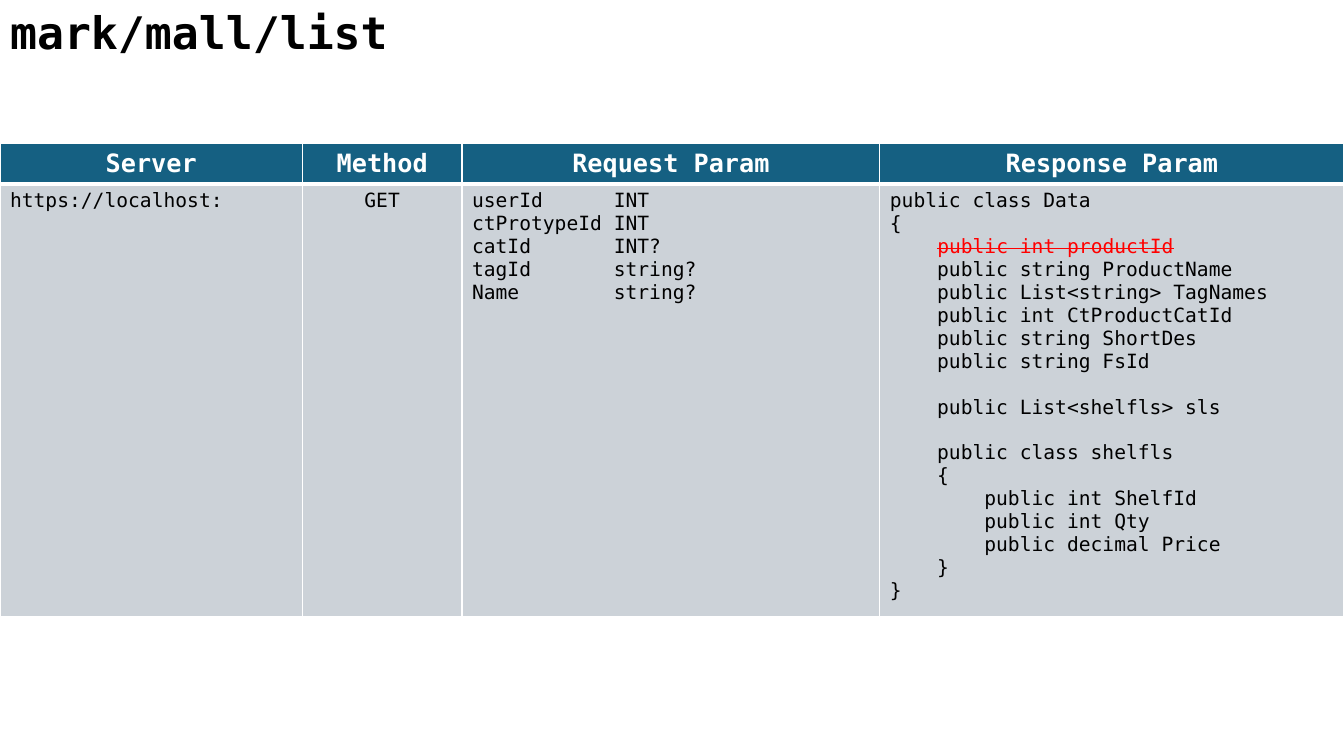
from dataclasses import dataclass

from lxml import etree
from pptx import Presentation
from pptx.dml.color import RGBColor
from pptx.enum.text import MSO_ANCHOR, MSO_AUTO_SIZE, PP_ALIGN
from pptx.oxml.ns import qn
from pptx.slide import Slide
from pptx.table import _Cell
from pptx.text.text import TextFrame, _Paragraph
from pptx.util import Pt

LEFT, CENTER = PP_ALIGN.LEFT, PP_ALIGN.CENTER
TOP = MSO_ANCHOR.TOP
NO_AUTOFIT = MSO_AUTO_SIZE.NONE

EMU_PER_PX = 9525
FONT = "DejaVu Sans Mono"
COLORS = {
    "header": "156082",
    "body": "CCD2D8",
    "white": "FFFFFF",
    "black": "000000",
    "removed": "FF0000",
}
BLANK_LINE_PT = 16.3
HEADER_HEIGHT, BODY_HEIGHT = 38, 412

REQUEST_PARAMS = """userId\tINT
ctProtypeId\tINT
catId\tINT?
tagId\tstring?
Name\tstring?"""

RESPONSE_CLASS = """public class Data
{
    public int productId
    public string ProductName
    public List<string> TagNames
    public int CtProductCatId
    public string ShortDes
    public string FsId

    public List<shelfls> sls

    public class shelfls
    {
        public int ShelfId
        public int Qty
        public decimal Price
    }
}"""


@dataclass(frozen=True)
class Column:
    heading: str
    width: int
    body: str
    align: PP_ALIGN = LEFT
    tab: int = 0
    struck: str = ""


COLUMNS = [
    Column("Server", 288, "https://localhost:"),
    Column("Method", 152, "GET", align=CENTER),
    Column("Request Param", 398, REQUEST_PARAMS, tab=135),
    Column("Response Param", 442, RESPONSE_CLASS, struck="public int productId"),
]


def px(value: int) -> int:
    return value * EMU_PER_PX


def rgb(name: str) -> RGBColor:
    return RGBColor.from_string(COLORS[name])


def add_tab_stop(paragraph: _Paragraph, position: int) -> None:
    properties = paragraph._p.get_or_add_pPr()
    tabs = etree.SubElement(properties, qn("a:tabLst"))
    etree.SubElement(tabs, qn("a:tab"), pos=str(px(position)), algn="l")


def write_text(frame: TextFrame, text: str, *, size: int, color: str = "black",
               bold: bool = False, align: PP_ALIGN = LEFT, tab: int = 0,
               struck: str = "") -> None:
    paragraph = frame.paragraphs[0]
    blank_lines = 0
    for index, line in enumerate(text.split("\n")):
        if not line:
            blank_lines += 1
            continue
        if index:
            paragraph = frame.add_paragraph()
        if tab:
            add_tab_stop(paragraph, tab)
        paragraph.alignment = align
        if blank_lines:
            paragraph.space_before = Pt(blank_lines * BLANK_LINE_PT)
            blank_lines = 0
        for part in line.partition(struck) if struck else (line,):
            if not part:
                continue
            run = paragraph.add_run()
            run.text = part
            run.font.name = FONT
            run.font.size = Pt(size)
            run.font.bold = bold
            run.font.color.rgb = rgb("removed" if part == struck else color)
            if part == struck:
                run._r.get_or_add_rPr().set("strike", "sngStrike")


def style_cell(cell: _Cell, fill: str, top: int, bottom: int) -> None:
    properties = cell._tc.get_or_add_tcPr()
    for side, width in {"L": 1, "R": 1, "T": top, "B": bottom}.items():
        line = etree.SubElement(properties, qn(f"a:ln{side}"), w=str(Pt(width)))
        solid = etree.SubElement(line, qn("a:solidFill"))
        etree.SubElement(solid, qn("a:srgbClr"), val=COLORS["white"])
    cell.fill.solid()
    cell.fill.fore_color.rgb = rgb(fill)


def add_title(slide: Slide, text: str) -> None:
    title = slide.shapes.title
    title.left, title.top = px(0), px(0)
    title.width, title.height = px(907), px(61)
    frame = title.text_frame
    frame.auto_size = NO_AUTOFIT
    frame.vertical_anchor = TOP
    write_text(frame, text, size=32, bold=True)


def add_endpoint_table(slide: Slide) -> None:
    width = sum(column.width for column in COLUMNS)
    table = slide.shapes.add_table(2, len(COLUMNS), px(0), px(137), px(width),
                                   px(HEADER_HEIGHT + BODY_HEIGHT)).table
    table.horz_banding = False
    table.rows[0].height = px(HEADER_HEIGHT)
    table.rows[1].height = px(BODY_HEIGHT)
    for index, column in enumerate(COLUMNS):
        table.columns[index].width = px(column.width)
        header, body = table.cell(0, index), table.cell(1, index)
        style_cell(header, "header", top=1, bottom=3)
        style_cell(body, "body", top=3, bottom=1)
        write_text(header.text_frame, column.heading, size=18, color="white",
                   bold=True, align=CENTER)
        write_text(body.text_frame, column.body, size=14, align=column.align,
                   tab=column.tab, struck=column.struck)


def main() -> None:
    presentation = Presentation()
    presentation.slide_width, presentation.slide_height = px(1280), px(720)
    slide = presentation.slides.add_slide(presentation.slide_layouts[5])
    add_title(slide, "mark/mall/list")
    add_endpoint_table(slide)
    presentation.save("out.pptx")


if __name__ == "__main__":
    main()
